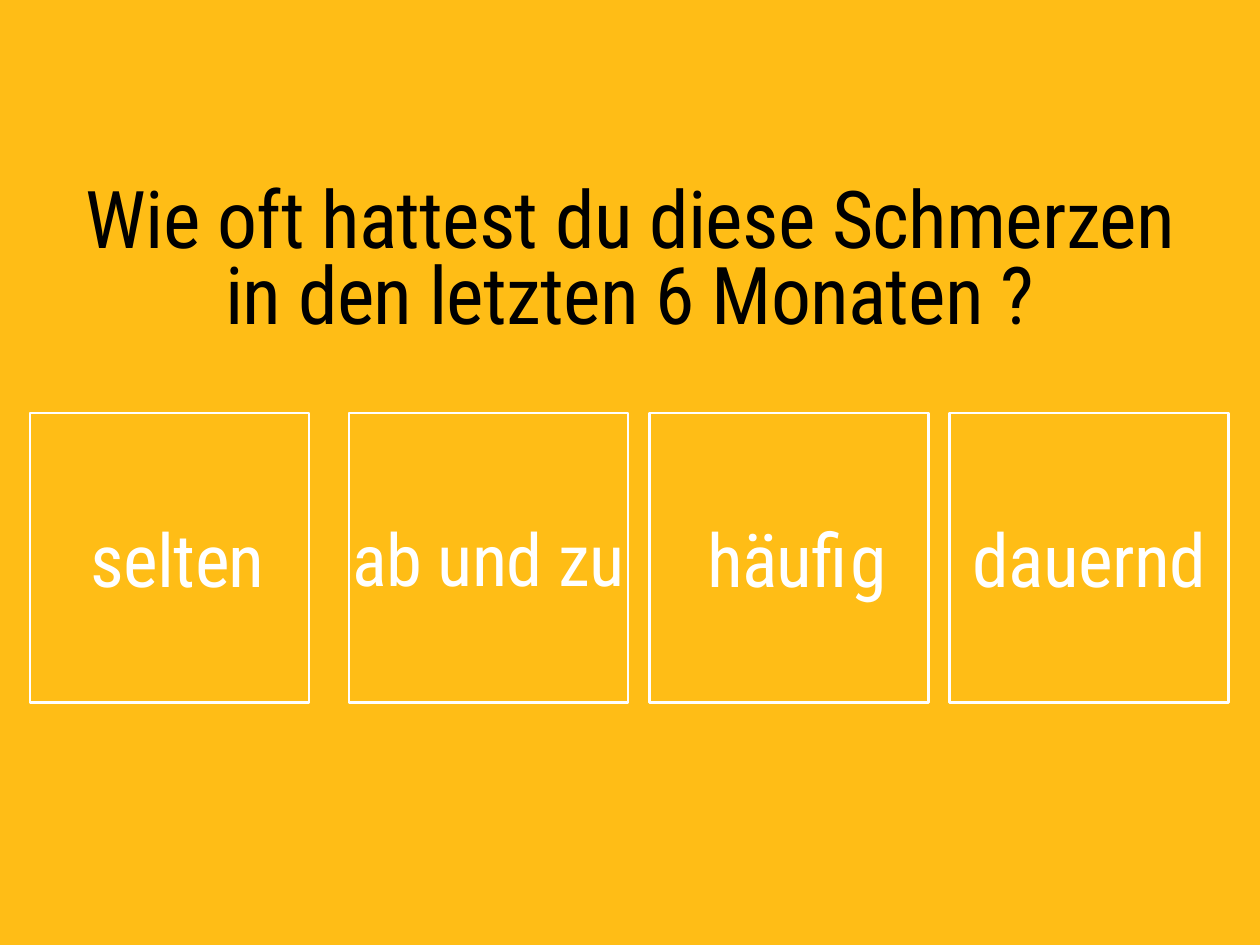
from pptx import Presentation
from pptx.dml.color import RGBColor
from pptx.enum.shapes import MSO_SHAPE
from pptx.enum.text import MSO_ANCHOR, PP_ALIGN
from pptx.util import Pt

RECTANGLE = MSO_SHAPE.RECTANGLE
MIDDLE = MSO_ANCHOR.MIDDLE
CENTER = PP_ALIGN.CENTER

FONT = "Roboto Condensed"
YELLOW, BLACK, WHITE = "FFBD16", "000000", "FFFFFF"
INSET = 2.16
LETTER_SPACING = -60  # hundredths of a point

# Answer text, size and left offset from the answer row
ANSWER_STEP = 244.05
ANSWERS = [(" selten", 60, 0)] + [
    (text, size, 259.2 + index * ANSWER_STEP)
    for index, (text, size) in enumerate(
        [("ab und zu", 59), (" häufig", 60), ("dauernd", 60)])
]


def color(hex_code):
    return RGBColor.from_string(hex_code)


def write_text(shape, text, size, hex_code, line_spacing=1.0):
    """Put one centred line of styled text in a shape."""
    frame = shape.text_frame
    frame_format = {
        "word_wrap": True, "vertical_anchor": MIDDLE,
        "margin_left": Pt(INSET), "margin_right": Pt(INSET),
        "margin_top": Pt(INSET), "margin_bottom": Pt(INSET),
    }
    for name, value in frame_format.items():
        setattr(frame, name, value)
    para = frame.paragraphs[0]
    para.alignment = CENTER
    para.line_spacing = line_spacing
    span = para.add_run()
    span.text = text
    for name, value in {"name": FONT, "size": Pt(size), "bold": False}.items():
        setattr(span.font, name, value)
    span.font.color.rgb = color(hex_code)
    span._r.get_or_add_rPr().set("spc", str(LETTER_SPACING))


def add_question(page, left, top, width, height):
    box = page.shapes.add_textbox(Pt(left), Pt(top), Pt(width), Pt(height))
    write_text(box, "Wie oft hattest du diese Schmerzen in den letzten 6 Monaten ?",
               64.8, BLACK, line_spacing=0.8)


def add_answers(page, left, top, width, height):
    """Place the outlined answer boxes in a row; width is that of one box."""
    for text, size, offset in ANSWERS:
        box = page.shapes.add_shape(
            RECTANGLE, Pt(left + offset), Pt(top), Pt(width), Pt(height))
        box.shadow.inherit = False
        box.fill.background()
        box.line.color.rgb = color(WHITE)
        box.line.width = Pt(2)
        write_text(box, text, size, WHITE)


def main():
    deck = Presentation()
    deck.slide_width, deck.slide_height = Pt(1024), Pt(768)
    page = deck.slides.add_slide(deck.slide_layouts[6])

    # Background
    page.background.fill.solid()
    page.background.fill.fore_color.rgb = color(YELLOW)

    # Question above, answers below
    add_question(page, 51.2, 124.6, 921.6, 179.3)
    add_answers(page, 24.5, 335.5, 226.8, 235.4)
    deck.save("out.pptx")


if __name__ == "__main__":
    main()
